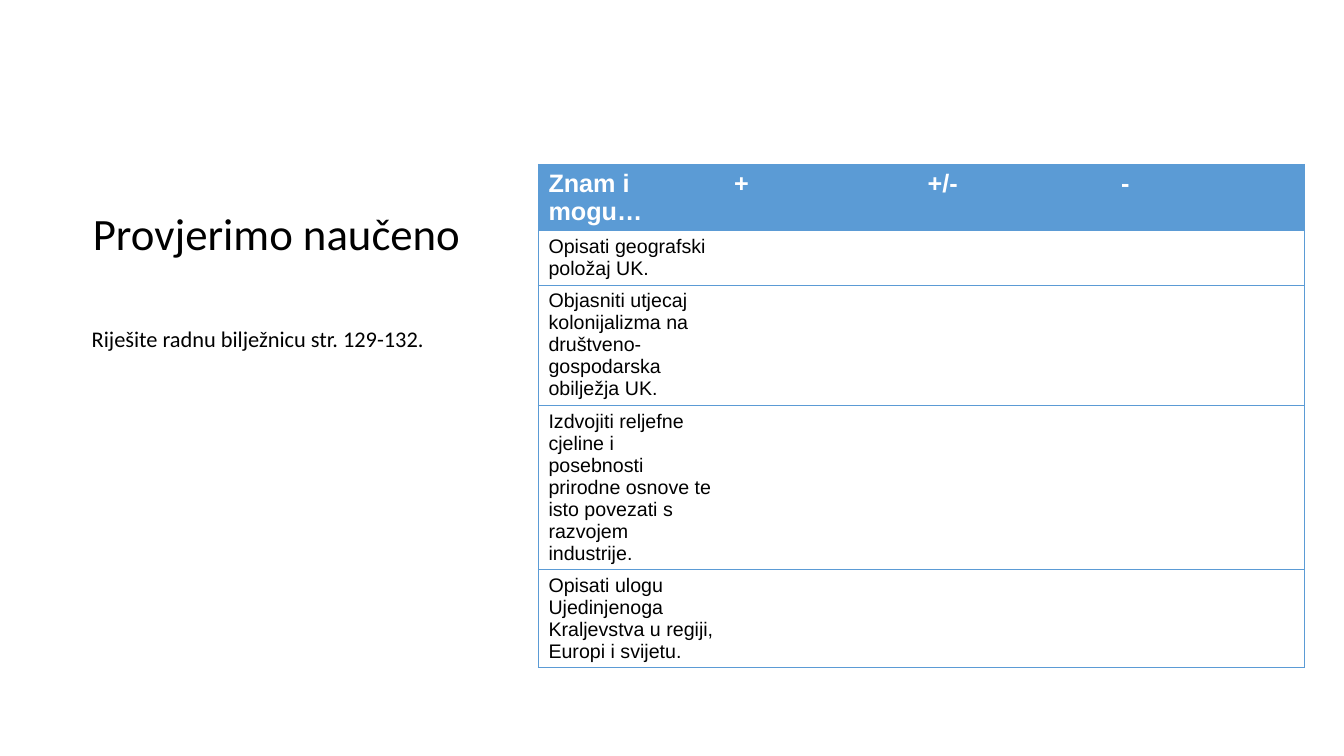
import pptx
import pptx.dml.color
import pptx.enum.text
import pptx.oxml
import pptx.oxml.ns
import pptx.util
from pptx.util import Inches

BLUE = pptx.dml.color.RGBColor(0x5B, 0x9B, 0xD5)
BLACK = pptx.dml.color.RGBColor(0, 0, 0)
WHITE = pptx.dml.color.RGBColor(255, 255, 255)

PLAIN_TABLE_STYLE = "{2D5ABB26-0587-4C30-8999-92F81FD0307C}"
TITLE_FONT = {"name": "Calibri", "size": pptx.util.Pt(32)}
NOTE_FONT = {"name": "Calibri", "size": pptx.util.Pt(16)}
HEADER_FONT = {"name": "Arial", "size": pptx.util.Pt(18), "bold": True}
GOAL_FONT = {"name": "Arial", "size": pptx.util.Pt(14), "bold": False}

HEADINGS = ["Znam i mogu…", "+", "+/-", "-"]
GOALS = [
    "Opisati geografski položaj UK.",
    "Objasniti utjecaj kolonijalizma na društveno-gospodarska obilježja UK.",
    "Izdvojiti reljefne cjeline i posebnosti prirodne osnove te isto "
    "povezati s razvojem industrije.",
    "Opisati ulogu Ujedinjenoga Kraljevstva u regiji, Europi i svijetu.",
]
COLUMN_WIDTHS = [1.84, 1.92, 1.92, 1.92]
ROW_HEIGHTS = [0.66, 0.53, 1.18, 1.62, 0.96]
RULED_ROWS = {0, 2, 4}  # rows with a line below


def format_font(font, values, color):
    for name, value in values.items():
        setattr(font, name, value)
    font.color.rgb = color


def fill_text(box, text, values, place):
    """Move a text shape and give it one formatted paragraph."""
    box.left, box.top, box.width, box.height = map(Inches, place)
    frame = box.text_frame
    frame.word_wrap = True
    frame.auto_size = pptx.enum.text.MSO_AUTO_SIZE.NONE
    frame.vertical_anchor = pptx.enum.text.MSO_ANCHOR.TOP
    for side in ("left", "top", "right", "bottom"):
        setattr(frame, f"margin_{side}", 0)
    para = frame.paragraphs[0]
    para.alignment = pptx.enum.text.PP_ALIGN.LEFT
    para.line_spacing = 0.9
    span = para.add_run()
    span.text = text
    format_font(span.font, values, BLACK)


def add_border(cell, side):
    line = pptx.oxml.parse_xml(
        f'<a:ln{side} {pptx.oxml.ns.nsdecls("a")} w="{pptx.util.Pt(0.75)}">'
        f'<a:solidFill><a:srgbClr val="{BLUE}"/></a:solidFill></a:ln{side}>')
    cell._tc.get_or_add_tcPr().append(line)


def format_cell(cell, row, column):
    sides = {
        "L": column == 0,
        "R": column == len(HEADINGS) - 1,
        "T": row == 0 or row - 1 in RULED_ROWS,
        "B": row in RULED_ROWS,
    }
    for side, shown in sides.items():
        if shown:
            add_border(cell, side)
    if row == 0:
        cell.fill.solid()
        cell.fill.fore_color.rgb = BLUE
    else:
        cell.fill.background()


def add_checklist(page):
    rows = [HEADINGS] + [[goal, "", "", ""] for goal in GOALS]
    frame = page.shapes.add_table(
        len(rows), len(HEADINGS), Inches(5.34), Inches(1.63),
        Inches(sum(COLUMN_WIDTHS)), Inches(sum(ROW_HEIGHTS)))
    table = frame.table
    table.horz_banding = False
    style = table._tbl.tblPr.find(pptx.oxml.ns.qn("a:tableStyleId"))
    style.text = PLAIN_TABLE_STYLE
    for column, width in zip(table.columns, COLUMN_WIDTHS):
        column.width = Inches(width)
    for row, height in zip(table.rows, ROW_HEIGHTS):
        row.height = Inches(height)
    for row, texts in enumerate(rows):
        values, color = (GOAL_FONT, BLACK) if row else (HEADER_FONT, WHITE)
        for column, text in enumerate(texts):
            cell = table.cell(row, column)
            format_cell(cell, row, column)
            if text:
                span = cell.text_frame.paragraphs[0].add_run()
                span.text = text
                format_font(span.font, values, color)


def main():
    deck = pptx.Presentation()
    deck.slide_width, deck.slide_height = Inches(13.33), Inches(7.5)
    page = deck.slides.add_slide(deck.slide_layouts[5])

    # Title and task
    fill_text(page.shapes.title, "Provjerimo naučeno", TITLE_FONT,
              (0.92, 2.1, 4.3, 1.87))
    task = page.shapes.add_textbox(0, 0, 0, 0)
    fill_text(task, "Riješite radnu bilježnicu str. 129-132.", NOTE_FONT,
              (0.91, 3.26, 4.3, 2.24))

    # Self-assessment table
    add_checklist(page)
    deck.save("out.pptx")


if __name__ == "__main__":
    main()
